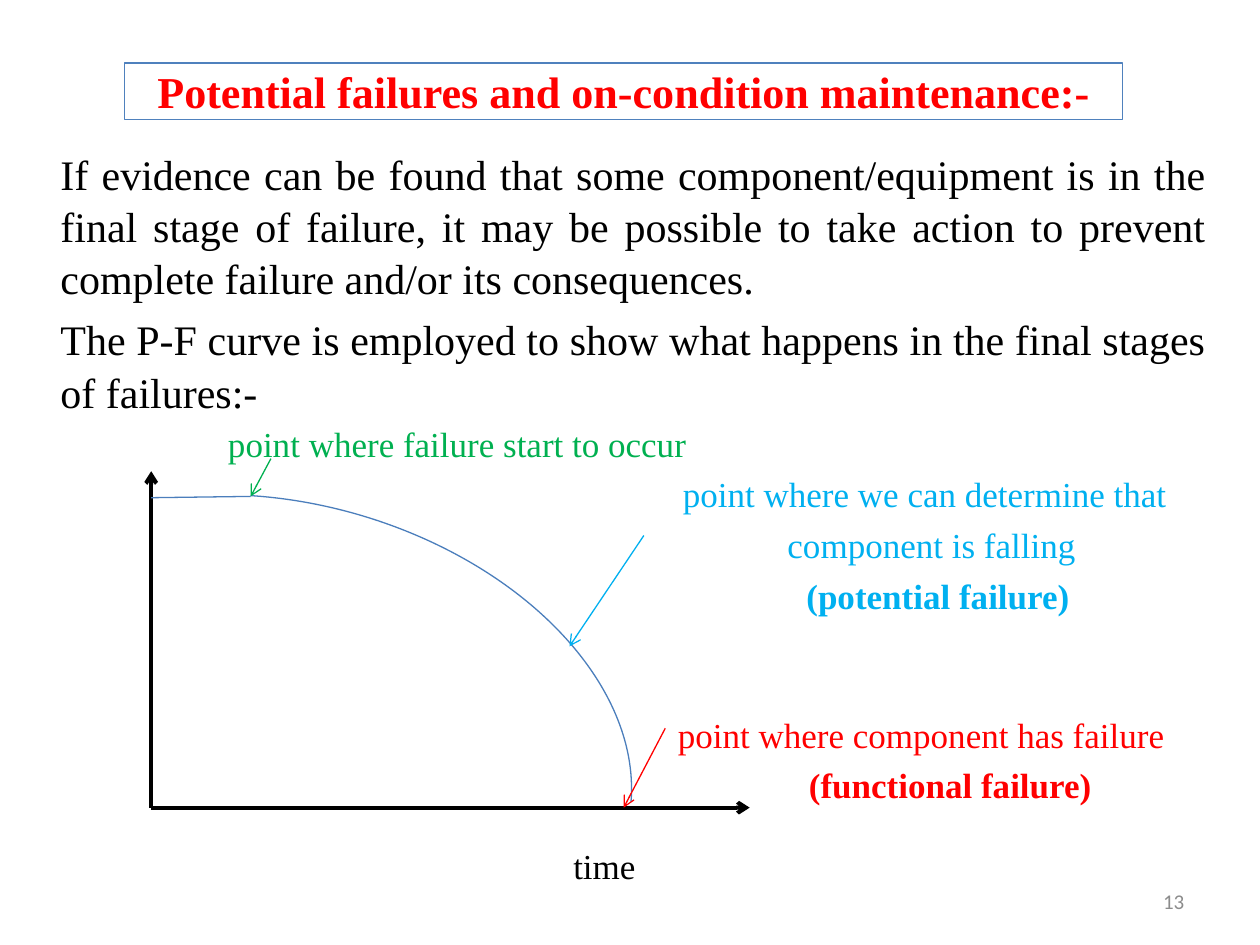
from dataclasses import dataclass

from lxml import etree
from pptx import Presentation
from pptx.dml.color import RGBColor
from pptx.enum.shapes import MSO_CONNECTOR, MSO_SHAPE
from pptx.enum.text import MSO_ANCHOR, MSO_AUTO_SIZE, PP_ALIGN
from pptx.oxml.ns import qn
from pptx.util import Inches, Pt

STRAIGHT = MSO_CONNECTOR.STRAIGHT
ARC = MSO_SHAPE.ARC
TOP, MIDDLE = MSO_ANCHOR.TOP, MSO_ANCHOR.MIDDLE
NO_FIT = MSO_AUTO_SIZE.NONE
LEFT, CENTER, RIGHT = PP_ALIGN.LEFT, PP_ALIGN.CENTER, PP_ALIGN.RIGHT
JUSTIFY = PP_ALIGN.JUSTIFY

WIDTH, HEIGHT = Inches(10), Inches(7.5)
COLUMNS, ROWS = 100, 75
TITLE_ONLY = 5


@dataclass(frozen=True)
class Theme:
    serif: str = "Times New Roman"
    sans: str = "Calibri"
    black: str = "000000"
    red: str = "FF0000"
    green: str = "00B050"
    sky: str = "00B0F0"
    border: str = "4F81BD"
    curve: str = "4B7EBC"
    gray: str = "8C8C8C"
    title: float = 25.2
    body: float = 24
    label: float = 20
    number: float = 12
    thin: float = 0.75
    thick: float = 2.25


THEME = Theme()


def across(columns):
    return round(WIDTH * columns / COLUMNS)


def down(rows):
    return round(HEIGHT * rows / ROWS)


def write(para, text, size=THEME.label, color=THEME.black, font=THEME.serif,
          bold=False, align=LEFT, before=0, spacing=1.0):
    para.alignment = align
    para.space_before = Pt(before)
    para.line_spacing = spacing
    span = para.add_run()
    span.text = text
    span.font.name = font
    span.font.size = Pt(size)
    span.font.bold = bold
    span.font.color.rgb = RGBColor.from_string(color)


class SlideBuilder:
    def __init__(self, deck, theme):
        self.theme = theme
        self.page = deck.slides.add_slide(deck.slide_layouts[TITLE_ONLY])

    def place(self, shape, left, top, width, height):
        shape.left, shape.top = across(left), down(top)
        shape.width, shape.height = across(width), down(height)

    def stroke(self, shape, color, weight):
        shape.line.color.rgb = RGBColor.from_string(color)
        shape.line.width = Pt(weight)

    def title(self, text, *area):
        box = self.page.shapes.title
        self.place(box, *area)
        self.stroke(box, self.theme.border, self.theme.thin)
        frame = box.text_frame
        frame.auto_size = NO_FIT
        frame.vertical_anchor = MIDDLE
        write(frame.paragraphs[0], text, size=self.theme.title,
              color=self.theme.red, bold=True, align=CENTER, before=5)

    def text(self, lines, *area, anchor=TOP, gap=5, **style):
        """Each line is (text, left indent in columns, bold)."""
        box = self.page.shapes.add_textbox(0, 0, 0, 0)
        self.place(box, *area)
        frame = box.text_frame
        frame.word_wrap = True
        frame.vertical_anchor = anchor
        frame.margin_left = frame.margin_right = 0
        frame.margin_top = frame.margin_bottom = 0
        for index, (text, indent, bold) in enumerate(lines):
            para = frame.add_paragraph() if index else frame.paragraphs[0]
            if indent:
                para._p.get_or_add_pPr().set("marL", str(across(indent)))
            write(para, text, bold=bold, before=gap if index else 0, **style)

    def line(self, start, end, color, weight=THEME.thin, arrow=True):
        line = self.page.shapes.add_connector(
            STRAIGHT, across(start[0]), down(start[1]), across(end[0]), down(end[1]))
        self.stroke(line, color, weight)
        if arrow:
            etree.SubElement(line.line._get_or_add_ln(), qn("a:tailEnd"), type="arrow")
        etree.SubElement(line._element.spPr, qn("a:effectLst"))

    def arc(self, *area, start, end, rotation):
        arc = self.page.shapes.add_shape(ARC, 0, 0, 0, 0)
        self.place(arc, *area)
        arc.rotation = rotation
        # Angles are kept in 60000ths of a degree, adjustments in 100000ths
        arc.adjustments[0], arc.adjustments[1] = start * 0.6, end * 0.6
        arc.fill.background()
        arc.shadow.inherit = False
        self.stroke(arc, self.theme.curve, self.theme.thin)


def main():
    deck = Presentation()
    deck.slide_width, deck.slide_height = WIDTH, HEIGHT
    slide = SlideBuilder(deck, THEME)

    # Title and explanation
    slide.title("Potential failures and on-condition maintenance:-", 9.9, 5, 79.2, 4.5)
    slide.text([
        ("If evidence can be found that some component/equipment is in the final "
         "stage of failure, it may be possible to take action to prevent complete "
         "failure and/or its consequences.", 0, False),
        ("The P-F curve is employed to show what happens in the final stages "
         "of failures:-", 0, False),
    ], 4.8, 11.6, 90.9, 21, size=THEME.body, align=JUSTIFY, spacing=1.04)

    # Labels of the stages and the time axis
    slide.text([("point where failure start to occur", 0, False)],
               18.1, 33.5, 40, 3.5, color=THEME.green)
    slide.text([("point where we can determine that", 0, False),
                ("component is falling", 8.3, False),
                ("(potential failure)", 9.8, True)],
               54.2, 37.5, 42, 11.5, color=THEME.sky)
    slide.text([("point where component has failure", 0, False),
                ("(functional failure)", 10.4, True)],
               53.8, 56.6, 42, 7.5, color=THEME.red)
    slide.text([("time", 0, False)], 45.5, 67, 6, 3.5)

    # Axes
    origin = (12, 64.1)
    for tip in ((59.5, origin[1]), (origin[0], 37.4)):
        slide.line(origin, tip, THEME.black, THEME.thick)

    # P-F curve: a nearly level run, then the falling arc
    onset = (19.9, 39.4)
    slide.arc(-4.2, 40.1, 54.9, 36.8, start=244.03, end=354.89, rotation=16)
    slide.line(onset, (origin[0], 39.5), THEME.curve, arrow=False)

    # Pointers from the labels to the curve
    for start, end, color in (
        ((21.5, 36.4), onset, THEME.green),
        ((52.8, 57.8), (49.5, origin[1]), THEME.red),
        ((51.1, 42.5), (45.2, 51.3), THEME.sky),
    ):
        slide.line(start, end, color)

    # Page number
    slide.text([("13", 0, False)], 71.7, 69.5, 22.3, 4, anchor=MIDDLE,
               size=THEME.number, color=THEME.gray, font=THEME.sans, align=RIGHT)

    deck.save("out.pptx")


if __name__ == "__main__":
    main()
